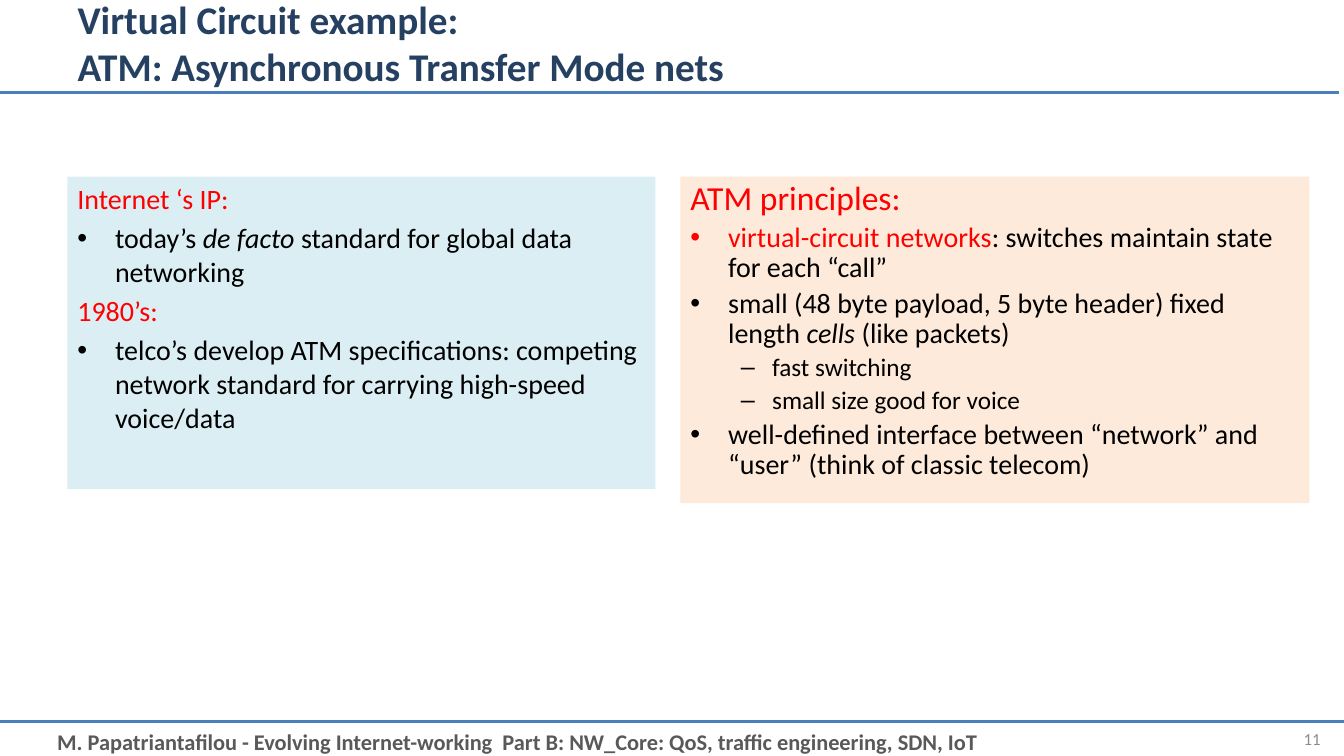
from dataclasses import dataclass

from lxml import etree
from pptx import Presentation
from pptx.dml.color import RGBColor
from pptx.enum.shapes import MSO_CONNECTOR, MSO_SHAPE
from pptx.enum.text import MSO_ANCHOR, MSO_AUTO_SIZE, PP_ALIGN
from pptx.oxml.ns import qn
from pptx.util import Cm, Pt

STRAIGHT = MSO_CONNECTOR.STRAIGHT
RECTANGLE = MSO_SHAPE.RECTANGLE
NO_AUTOFIT = MSO_AUTO_SIZE.NONE
TOP, MIDDLE = MSO_ANCHOR.TOP, MSO_ANCHOR.MIDDLE
LEFT, RIGHT = PP_ALIGN.LEFT, PP_ALIGN.RIGHT


@dataclass(frozen=True)
class Theme:
    """Colours, font and type sizes of the slide."""
    font: str = "Calibri"
    title: str = "254061"
    rule: str = "4B7EBC"
    footer: str = "595959"
    number: str = "8C8C8C"
    accent: str = "FF0000"
    body: str = "000000"
    blue_panel: str = "DBEEF4"
    orange_panel: str = "FDEADA"
    title_size: int = 28
    heading_size: int = 24
    body_size: int = 20
    detail_size: int = 18
    footer_size: int = 16
    number_size: int = 12


THEME = Theme()
INDENTS = ((0.95, 0.95), (2.06, 0.79))
SPACE_BEFORE_SHARE = 0.2

INTERNET_ITEMS = (
    ([("Internet ‘s IP:", THEME.accent, False)], {}),
    ([("today’s ", THEME.body, False), ("de facto", THEME.body, True),
      (" standard for global data networking", THEME.body, False)], {"bullet": "•"}),
    ([("1980’s:", THEME.accent, False)], {}),
    ([("telco’s develop ATM specifications: competing network standard "
       "for carrying high-speed voice/data", THEME.body, False)], {"bullet": "•"}),
)
ATM_ITEMS = (
    ([("ATM principles:", THEME.accent, False)], {"size": THEME.heading_size}),
    ([("virtual-circuit networks", THEME.accent, False),
      (": switches maintain state for each “call”", THEME.body, False)], {"bullet": "•"}),
    ([("small (48 byte payload, 5 byte header) fixed length ", THEME.body, False),
      ("cells", THEME.body, True), (" (like packets)", THEME.body, False)], {"bullet": "•"}),
    ([("fast switching", THEME.body, False)],
     {"bullet": "–", "level": 1, "size": THEME.detail_size}),
    ([("small size good for voice", THEME.body, False)],
     {"bullet": "–", "level": 1, "size": THEME.detail_size}),
    ([("well-defined interface between “network” and “user” (think of classic telecom)",
       THEME.body, False)], {"bullet": "•"}),
)


def write_text(paragraph, text, *, size, color, bold=False, italic=False, align=LEFT):
    """Add a formatted run, turning newlines into line breaks."""
    paragraph.alignment = align
    for index, line in enumerate(text.split("\n")):
        if index:
            paragraph.add_line_break()
        run = paragraph.add_run()
        run.text = line
        run.font.name = THEME.font
        run.font.size = Pt(size)
        run.font.bold = bold
        run.font.italic = italic
        run.font.color.rgb = RGBColor.from_string(color)


def set_bullet(paragraph, level, bullet):
    """Give a paragraph its hanging indent and optional bullet."""
    margin, hanging = INDENTS[level]
    properties = paragraph._p.get_or_add_pPr()
    properties.set("marL", str(Cm(margin)))
    properties.set("indent", str(-Cm(hanging)))
    if bullet:
        font = etree.SubElement(properties, qn("a:buFont"))
        font.set("typeface", "Arial")
        etree.SubElement(properties, qn("a:buChar")).set("char", bullet)
    else:
        etree.SubElement(properties, qn("a:buNone"))


def prepare_frame(shape, anchor):
    """Make a shape's text wrap inside its fixed size and return its frame."""
    frame = shape.text_frame
    frame.word_wrap = True
    frame.auto_size = NO_AUTOFIT
    frame.vertical_anchor = anchor
    return frame


def add_title(slide, box, text):
    """Place and format the title placeholder."""
    title = slide.shapes.title
    title.left, title.top, title.width, title.height = map(Cm, box)
    paragraph = prepare_frame(title, MIDDLE).paragraphs[0]
    write_text(paragraph, text, size=THEME.title_size, color=THEME.title, bold=True)


def add_rule(slide, left, top, width):
    """Draw a horizontal rule across the slide."""
    rule = slide.shapes.add_connector(STRAIGHT, Cm(left), Cm(top), Cm(left + width), Cm(top))
    rule.line.color.rgb = RGBColor.from_string(THEME.rule)
    rule.line.width = Pt(2.25)
    etree.SubElement(rule._element.spPr, qn("a:effectLst"))


def add_panel(slide, box, fill, items, line_spacing):
    """Draw a filled panel with its heading and bullets."""
    panel = slide.shapes.add_shape(RECTANGLE, *map(Cm, box))
    panel.shadow.inherit = False
    panel.fill.solid()
    panel.fill.fore_color.rgb = RGBColor.from_string(fill)
    panel.line.fill.background()
    frame = prepare_frame(panel, TOP)
    for index, (runs, style) in enumerate(items):
        paragraph = frame.add_paragraph() if index else frame.paragraphs[0]
        size = style.get("size", THEME.body_size)
        level = style.get("level", 0)
        paragraph.level = level
        paragraph.line_spacing = line_spacing
        paragraph.space_before = Pt(size * SPACE_BEFORE_SHARE)
        set_bullet(paragraph, level, style.get("bullet"))
        for text, color, italic in runs:
            write_text(paragraph, text, size=size, color=color, italic=italic)


def add_label(slide, box, text, anchor=TOP, **text_format):
    """Place one line of text in a box."""
    label = slide.shapes.add_textbox(*map(Cm, box))
    write_text(prepare_frame(label, anchor).paragraphs[0], text, **text_format)


def add_footer(slide, left, top, width):
    """Draw the footer rule, the course line and the slide number."""
    add_rule(slide, left, top, width)
    add_label(slide, (left + 1.19, top + 0.03, 31.34, 0.94),
              "M. Papatriantafilou - Evolving Internet-working  Part B: "
              "NW_Core: QoS, traffic engineering, SDN, IoT",
              size=THEME.footer_size, color=THEME.footer, bold=True)
    add_label(slide, (left + 30.81, top - 0.08, 2.72, 1.02), "11", anchor=MIDDLE,
              size=THEME.number_size, color=THEME.number, align=RIGHT)


def main():
    """Build the slide and save it."""
    presentation = Presentation()
    presentation.slide_width = Cm(33.87)
    presentation.slide_height = Cm(19.05)
    slide = presentation.slides.add_slide(presentation.slide_layouts[5])
    add_footer(slide, 0, 18.19, 33.87)
    add_rule(slide, -0.13, 2.34, 33.87)
    add_panel(slide, (1.7, 4.45, 14.82, 7.87), THEME.blue_panel, INTERNET_ITEMS, 1.0)
    add_panel(slide, (17.15, 4.45, 15.85, 8.23), THEME.orange_panel, ATM_ITEMS, 0.9)
    add_title(slide, (1.7, 0, 30.43, 2.11),
              "Virtual Circuit example:\nATM: Asynchronous Transfer Mode nets")
    presentation.save("out.pptx")


if __name__ == "__main__":
    main()
